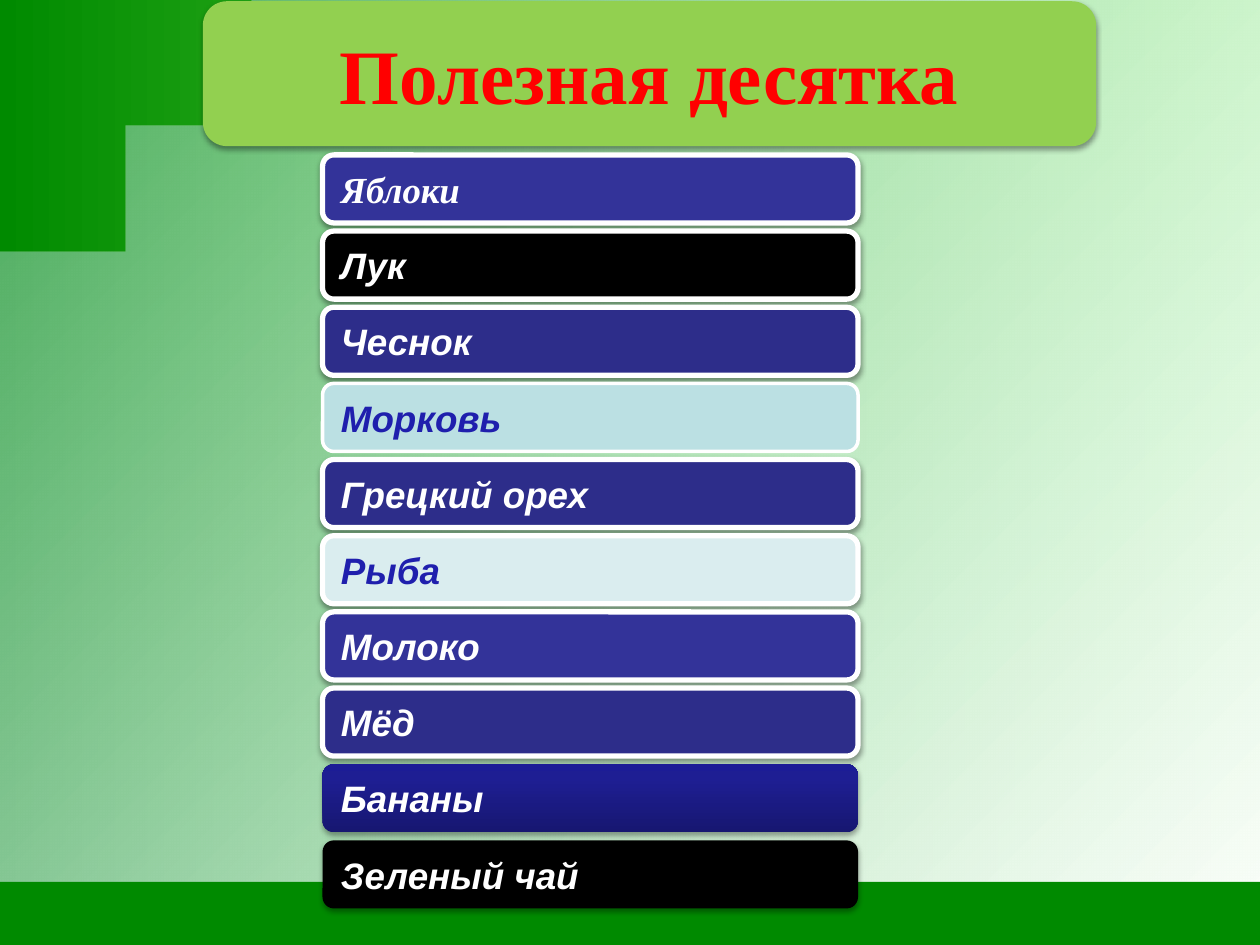
from collections import namedtuple
from dataclasses import dataclass

from lxml import etree
from pptx import Presentation
from pptx.dml.color import RGBColor
from pptx.enum.shapes import MSO_SHAPE
from pptx.enum.text import MSO_ANCHOR, MSO_AUTO_SIZE, PP_ALIGN
from pptx.oxml.ns import qn
from pptx.util import Inches, Pt

ROUNDED = MSO_SHAPE.ROUNDED_RECTANGLE
MIDDLE = MSO_ANCHOR.MIDDLE
NO_FIT = MSO_AUTO_SIZE.NONE
LEFT, CENTER = PP_ALIGN.LEFT, PP_ALIGN.CENTER

Box = namedtuple("Box", "x y w h")
Item = namedtuple("Item", "text fill color font line", defaults=("FFFFFF", "Arial", 3))


@dataclass(frozen=True)
class Theme:
    green: str = "008A00"
    lime: str = "99FF66"
    card: str = "92D050"
    title: str = "FF0000"
    white: str = "FFFFFF"
    black: str = "000000"
    blue: str = "333399"
    navy: str = "2D2D8A"
    ink: str = "1F1FAD"
    aqua: str = "BBE0E3"
    pale: str = "DAEDEF"
    serif: str = "Times New Roman"
    title_size: int = 44
    item_size: int = 21


T = Theme()
DEEP_BLUE = ((0, "171771"), (80, "1E1E93"), (100, "1C1C96"))
ITEMS = (
    Item("Яблоки", T.blue, font=T.serif),
    Item("Лук", T.black),
    Item("Чеснок", T.navy),
    Item("Морковь", T.aqua, T.ink, line=2),
    Item("Грецкий орех", T.navy),
    Item("Рыба", T.pale, T.ink),
    Item("Молоко", T.blue),
    Item("Мёд", T.navy),
    Item("Бананы", DEEP_BLUE, line=0),
    Item("Зеленый чай", T.black, line=0),
)


def add_color(parent, color, alpha=100):
    clr = etree.SubElement(parent, qn("a:srgbClr"), val=color)
    if alpha < 100:
        etree.SubElement(clr, qn("a:alpha"), val=str(alpha * 1000))


def set_fill(fill, value, angle=0):
    if isinstance(value, str):
        fill.solid()
        fill.fore_color.rgb = RGBColor.from_string(value)
        return
    fill.gradient()
    fill.gradient_angle = -angle % 360
    stops = fill.gradient_stops[0]._gs.getparent()
    for gs in list(stops):
        stops.remove(gs)
    for pos, *color in value:
        add_color(etree.SubElement(stops, qn("a:gs"), pos=str(pos * 1000)), *color)


def add_shadow(sp, alpha=38):
    effects = sp._element.spPr.find(qn("a:effectLst"))
    shadow = etree.SubElement(effects, qn("a:outerShdw"), blurRad=str(Pt(3.1)),
                              dist=str(Pt(1.6)), dir="5400000", rotWithShape="0")
    add_color(shadow, T.black, alpha)


def style(sp, fill, angle=0, line=0):
    sp.shadow.inherit = False
    set_fill(sp.fill, fill, angle)
    if line:
        set_fill(sp.line.fill, T.white)
        sp.line.width = Pt(line)
    else:
        sp.line.fill.background()


def write(sp, text, *, size, color, font, align=LEFT, inset=0.12, italic=False):
    tf = sp.text_frame
    tf.word_wrap = True
    tf.auto_size = NO_FIT
    tf.vertical_anchor = MIDDLE
    tf.margin_left = tf.margin_right = Inches(inset)
    tf.margin_top = tf.margin_bottom = Inches(inset)
    p = tf.paragraphs[0]
    p.alignment = align
    r = p.add_run()
    r.text = text
    r.font.size, r.font.name = Pt(size), font
    r.font.bold, r.font.italic = True, italic
    r.font.color.rgb = RGBColor.from_string(color)


def add_bar(s, box, fill, angle=0, line=0):
    sp = s.shapes.add_shape(ROUNDED, *map(Inches, box))
    style(sp, fill, angle, line)
    return sp


def curve(p0, p1, p2, p3, steps=24):
    points = []
    for i in range(1, steps + 1):
        t = i / steps
        u = 1 - t
        weights = (u ** 3, 3 * u * u * t, 3 * u * t * t, t ** 3)
        points.append(tuple(sum(k * v for k, v in zip(weights, axis))
                            for axis in zip(p0, p1, p2, p3)))
    return points


def add_outline(s, box, points, fill, angle=0):
    (x0, y0), *rest = [(box.x + x * box.w, box.y + y * box.h) for x, y in points]
    fb = s.shapes.build_freeform(x0, y0, scale=Inches(1))
    fb.add_line_segments(rest, close=True)
    style(fb.convert_to_shape(), fill, angle)


def add_backdrop(s, box):
    set_fill(s.background.fill, ((0, T.green), (100, T.lime)))
    top, bend, edge = (0.26, 0), (0.1, 0.14), (0, 0.4)
    sweep = [top]
    sweep += curve(top, (0.19, 0.02), (0.12, 0.11), bend)
    sweep += curve(bend, (0.08, 0.18), (0.02, 0.26), edge)
    sweep += [(0, 1), (1, 1), (1, 0)]
    add_outline(s, box, sweep, ((0, T.aqua, 39), (100, T.white)), 45)


def add_footer(s, box):
    high, low = (0.47, 0), (0.29, 0.24)
    band = [(1, 0), high]
    band += curve(high, (0.44, 0), (0.44, 0.02), (0.42, 0.04))
    band += [(0.34, 0.2)]
    band += curve((0.34, 0.2), (0.32, 0.24), (0.31, 0.24), low)
    band += [(0, 0.24), (0, 1), (1, 1)]
    add_outline(s, box, band, T.green)


def add_title(s, box):
    card = add_bar(s, box, T.card)
    add_shadow(card)
    title = s.shapes.title
    pad = 0.06
    title.left, title.top = Inches(box.x + pad), Inches(box.y + pad)
    title.width, title.height = Inches(box.w - 2 * pad), Inches(box.h - 2 * pad)
    write(title, "Полезная десятка", size=T.title_size, color=T.title,
          font=T.serif, align=CENTER, inset=0.18)
    card._element.addnext(title._element)


def add_items(s, box, bar=0.54):
    step = (box.h - bar) / (len(ITEMS) - 1)
    for i, item in enumerate(ITEMS):
        sp = add_bar(s, Box(box.x, box.y + i * step, box.w, bar),
                     item.fill, 270, item.line)
        if item.line != 2:
            add_shadow(sp, 38 if item.line else 35)
        write(sp, item.text, size=T.item_size, color=item.color,
              font=item.font, italic=True)


def main():
    prs = Presentation()
    prs.slide_width, prs.slide_height = Inches(10), Inches(7.5)
    s = prs.slides.add_slide(prs.slide_layouts[5])
    add_backdrop(s, Box(0, 0, 10, 7.5))
    add_footer(s, Box(0, 7.25, 10, 0.25))
    add_title(s, Box(1.61, 0.01, 7.09, 1.15))
    add_items(s, Box(2.56, 1.23, 4.25, 5.98))
    prs.save("out.pptx")


if __name__ == "__main__":
    main()
